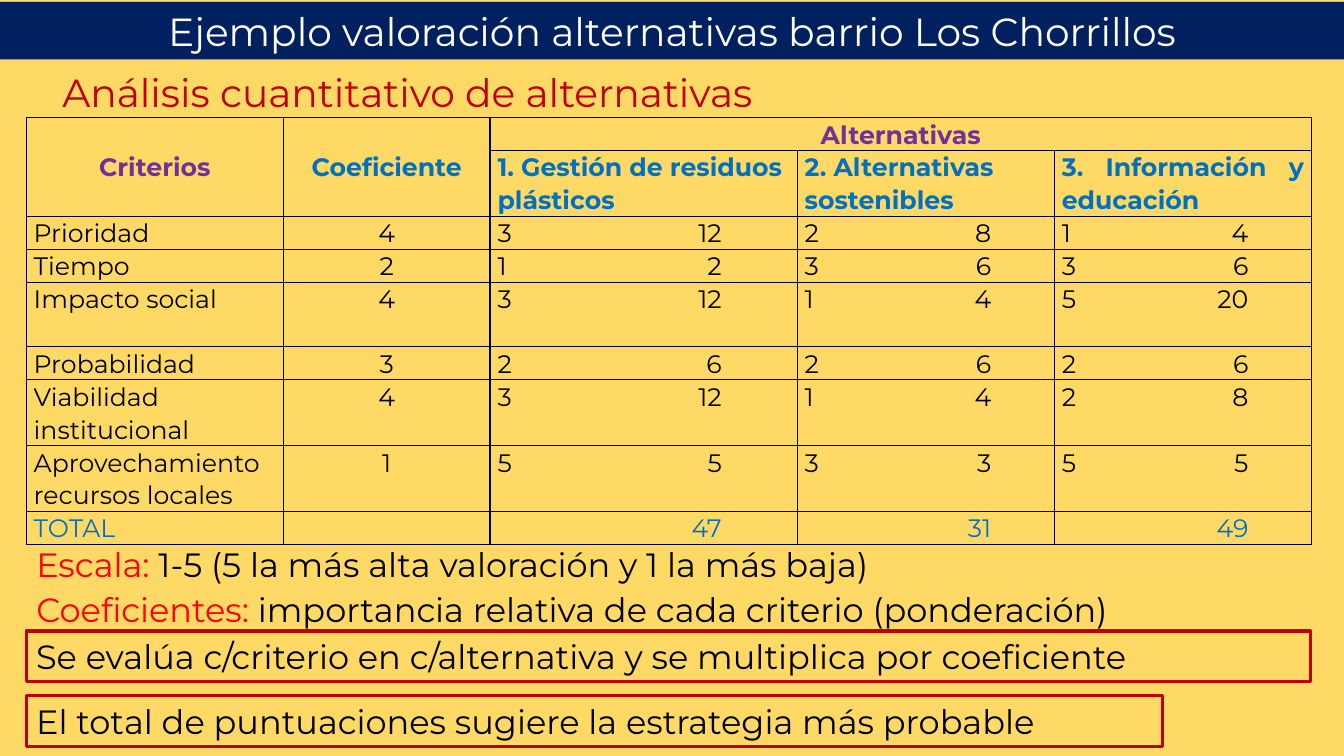
from lxml import etree
from pptx import Presentation
from pptx.dml.color import RGBColor
from pptx.enum.shapes import MSO_SHAPE
from pptx.enum.text import MSO_ANCHOR, MSO_AUTO_SIZE, PP_ALIGN
from pptx.oxml.ns import qn
from pptx.util import Cm, Pt

# Content
TITLE = "Ejemplo valoración alternativas barrio Los Chorrillos"
HEADING = "Análisis cuantitativo de alternativas"
OPTIONS = ["1. Gestión de residuos plásticos", "2. Alternativas sostenibles",
           "3. Información y educación"]
# Criterion, coefficient, score of each option, lines in the row
CRITERIA = [
    ("Prioridad", 4, (3, 2, 1), 1),
    ("Tiempo", 2, (1, 3, 3), 1),
    ("Impacto social", 4, (3, 1, 5), 2),
    ("Probabilidad", 3, (2, 2, 2), 1),
    ("Viabilidad institucional", 4, (3, 1, 2), 2),
    ("Aprovechamiento recursos locales", 1, (5, 3, 5), 2),
]
TOTALS = [47, 31, 49]
NOTES = [("Escala:", " 1-5 (5 la más alta valoración y 1 la más baja)"),
         ("Coeficientes:", " importancia relativa de cada criterio (ponderación)")]
# Text, top and width in cm
BOXES = [
    ("Se evalúa c/criterio en c/alternativa y se multiplica por coeficiente", 15.9, 32.36),
    ("El total de puntuaciones sugiere la estrategia más probable", 17.53, 28.63),
]

# Style
FONT = "Montserrat"
SAND = RGBColor(0xFF, 0xD9, 0x66)
NAVY = RGBColor(0x00, 0x20, 0x60)
WHITE = RGBColor(0xFF, 0xFF, 0xFF)
BLACK = RGBColor(0x00, 0x00, 0x00)
CRIMSON = RGBColor(0xC0, 0x00, 0x00)
RED = RGBColor(0xFF, 0x00, 0x00)
PURPLE = RGBColor(0x70, 0x30, 0xA0)
BLUE = RGBColor(0x00, 0x70, 0xC0)
LEFT, MID, JUST = PP_ALIGN.LEFT, PP_ALIGN.CENTER, PP_ALIGN.JUSTIFY
TOP, CENTER = MSO_ANCHOR.TOP, MSO_ANCHOR.MIDDLE
FIXED = MSO_AUTO_SIZE.NONE
RECT = MSO_SHAPE.RECTANGLE

# Layout in cm
EDGE = 0.66
COLS = [6.48, 5.21, 7.74, 6.48, 6.48]
TABS = [5.65, 4.7, 4.7]
ROW = {1: 0.82, 2: 1.63}


def ink(run, size, color, bold=False):
    font = run.font
    font.name, font.size, font.bold = FONT, Pt(size), bold
    font.color.rgb = color


def place(shape, left, top, width, height):
    shape.left, shape.top = Cm(left), Cm(top)
    shape.width, shape.height = Cm(width), Cm(height)


def write(shape, text, size, color, align=LEFT):
    frame = shape.text_frame
    frame.word_wrap = True
    frame.auto_size = FIXED
    frame.text = text
    par = frame.paragraphs[0]
    par.alignment = align
    ink(par.runs[0], size, color)


def border(cell):
    props = cell._tc.get_or_add_tcPr()
    for spot, side in enumerate(("lnL", "lnR", "lnT", "lnB")):
        line = etree.Element(qn("a:" + side), w=str(Pt(1)))
        fill = etree.SubElement(line, qn("a:solidFill"))
        etree.SubElement(fill, qn("a:srgbClr"), val=str(BLACK))
        props.insert(spot, line)


def put(cell, text, color=BLACK, align=LEFT, bold=False, tab=None):
    cell.text = text
    par = cell.text_frame.paragraphs[0]
    par.alignment = align
    par.line_spacing = 1.07
    ink(par.runs[0], 18, color, bold)
    if tab:
        stops = etree.SubElement(par._p.get_or_add_pPr(), qn("a:tabLst"))
        etree.SubElement(stops, qn("a:tab"), pos=str(Cm(tab)), algn="r")


def add_grid(slide):
    lines = [1, 2] + [item[3] for item in CRITERIA] + [1]
    sizes = [ROW[count] for count in lines]
    grid = slide.shapes.add_table(len(sizes), len(COLS), Cm(EDGE), Cm(2.96),
                                  Cm(sum(COLS)), Cm(sum(sizes))).table
    grid.first_row = grid.horz_banding = False
    for col, width in zip(grid.columns, COLS):
        col.width = Cm(width)
    for row, height in zip(grid.rows, sizes):
        row.height = Cm(height)
        for cell in row.cells:
            cell.margin_left = cell.margin_right = Cm(0.19)
            cell.margin_top = cell.margin_bottom = 0
            cell.fill.background()
            border(cell)

    # Header
    heads = [("Criterios", PURPLE, (1, 0)), ("Coeficiente", BLUE, (1, 1)),
             ("Alternativas", PURPLE, (0, 4))]
    for col, (text, color, end) in enumerate(heads):
        cell = grid.cell(0, col)
        cell.merge(grid.cell(*end))
        cell.vertical_anchor = CENTER
        put(cell, text, color, MID, True)
    for col, text in enumerate(OPTIONS, 2):
        put(grid.cell(1, col), text, BLUE, JUST if col == 4 else LEFT, True)

    # Scores, each with its weighted value
    for row, (name, weight, scores, _) in enumerate(CRITERIA, 2):
        put(grid.cell(row, 0), name)
        put(grid.cell(row, 1), str(weight), align=MID)
        for col, (score, tab) in enumerate(zip(scores, TABS), 2):
            put(grid.cell(row, col), f"{score}\t{score * weight}", tab=tab)

    # Totals
    last = len(sizes) - 1
    put(grid.cell(last, 0), "TOTAL", BLUE)
    for col, (total, tab) in enumerate(zip(TOTALS, TABS), 2):
        put(grid.cell(last, col), f"\t{total}", BLUE, tab=tab)


def add_notes(body):
    place(body, EDGE, 13.59, 30.68, 2.4)
    frame = body.text_frame
    frame.auto_size = FIXED
    for index, (label, text) in enumerate(NOTES):
        par = frame.add_paragraph() if index else frame.paragraphs[0]
        par.space_before = Pt(3 * index)
        props = par._p.get_or_add_pPr()
        props.set("marL", "0")
        props.set("indent", "0")
        etree.SubElement(props, qn("a:buNone"))
        for part, color in ((label, RED), (text, BLACK)):
            run = par.add_run()
            run.text = part
            ink(run, 24, color)


def main():
    deck = Presentation()
    deck.slide_width, deck.slide_height = Cm(33.87), Cm(19.05)
    slide = deck.slides.add_slide(deck.slide_layouts[1])
    back = slide.background.fill
    back.solid()
    back.fore_color.rgb = SAND

    # Title bar and heading
    title = slide.shapes.title
    place(title, 0, 0.05, 33.87, 1.45)
    title.fill.solid()
    title.fill.fore_color.rgb = NAVY
    write(title, TITLE, 28, WHITE, MID)
    heading = slide.shapes.add_textbox(Cm(1.32), Cm(1.6), Cm(21.06), Cm(1.45))
    write(heading, HEADING, 28, CRIMSON)

    add_grid(slide)
    add_notes(slide.placeholders[1])

    # Framed conclusions
    for text, top, width in BOXES:
        box = slide.shapes.add_shape(RECT, Cm(EDGE), Cm(top), Cm(width), Cm(1.28))
        box.shadow.inherit = False
        box.fill.background()
        box.line.color.rgb = CRIMSON
        box.line.width = Pt(2.25)
        box.text_frame.vertical_anchor = TOP
        write(box, text, 24, BLACK)

    deck.save("out.pptx")


if __name__ == "__main__":
    main()
